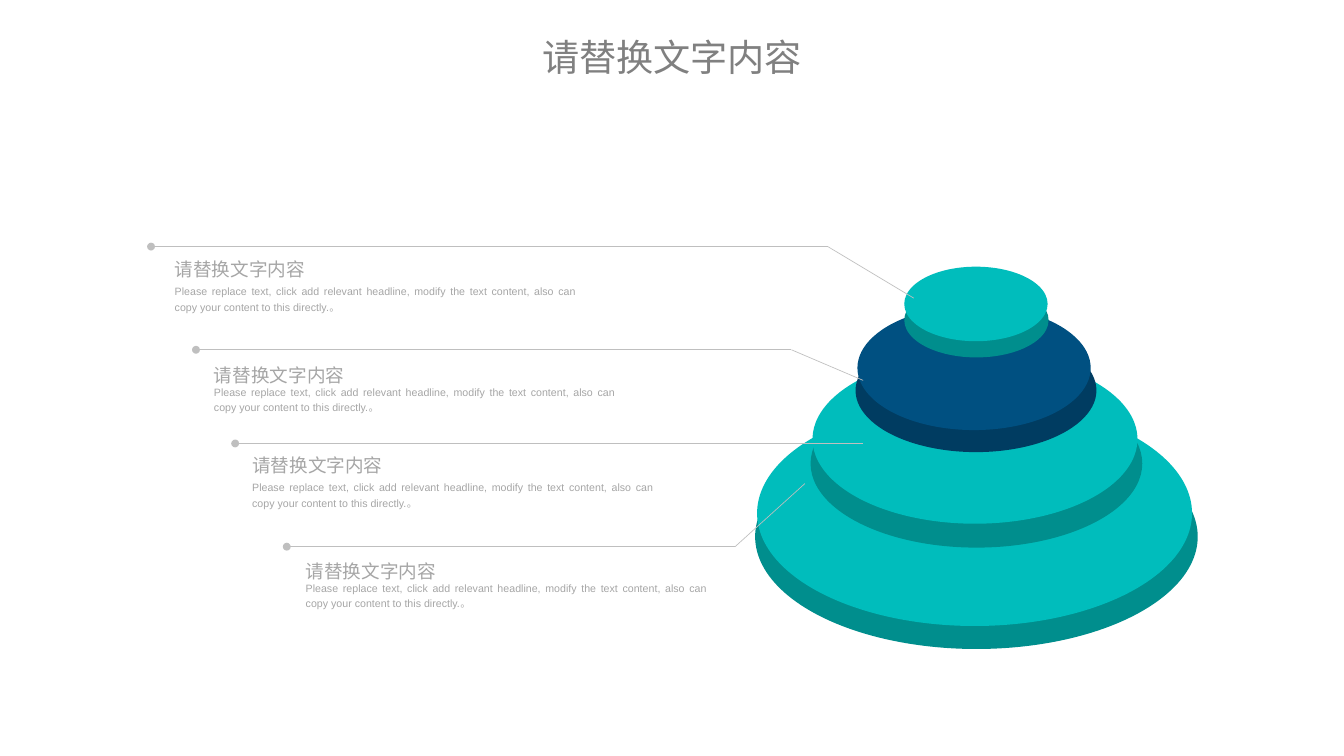
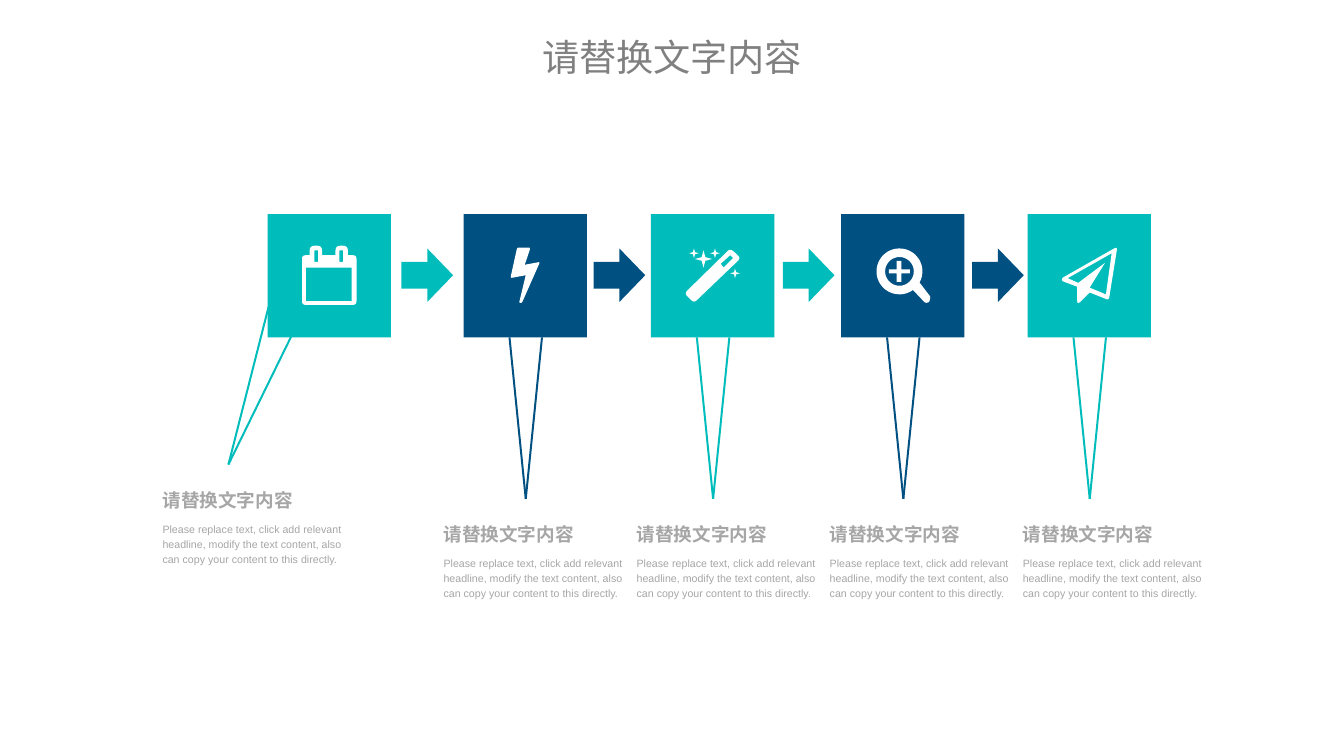
from math import cos, sin, radians

from lxml.etree import SubElement
from pptx import Presentation
from pptx.dml.color import RGBColor
from pptx.enum.shapes import MSO_CONNECTOR, MSO_SHAPE
from pptx.enum.text import MSO_ANCHOR, MSO_AUTO_SIZE, PP_ALIGN
from pptx.oxml.ns import qn
from pptx.util import Emu, Pt

# Scale: 100 px to the inch; outlines are traced in tenths of a px
PX = 9144
FINE = 10
WIDE, HIGH = 1406, 791

TEAL = RGBColor(0x00, 0xBD, 0xBC)
TEAL_DARK = RGBColor(0x00, 0x8E, 0x8D)
NAVY = RGBColor(0x00, 0x50, 0x81)
NAVY_DARK = RGBColor(0x00, 0x3C, 0x61)
WHITE = RGBColor(0xFF, 0xFF, 0xFF)
GREY = RGBColor(0x80, 0x80, 0x80)
PALE = RGBColor(0xA6, 0xA6, 0xA6)
RULE = RGBColor(0xBF, 0xBF, 0xBF)

# Shared wording
HEAD = "请替换文字内容"
BODY = ("Please replace text, click add relevant headline, modify the text "
        "content, also can copy your content to this directly.")

# Text styles: font, paragraph, frame, inset (side, top) and colour
BOX = {"word_wrap": True, "auto_size": MSO_AUTO_SIZE.SHAPE_TO_FIT_TEXT}
FIXED = {"word_wrap": True, "auto_size": MSO_AUTO_SIZE.NONE,
         "vertical_anchor": MSO_ANCHOR.MIDDLE}
LEFT = {"alignment": PP_ALIGN.LEFT, "line_spacing": 1.2}
TITLE = {"font": {"size": Pt(28)}, "para": {"alignment": PP_ALIGN.CENTER, "line_spacing": 1.3},
         "frame": BOX, "inset": (0, 0), "hue": GREY}
LABEL = {"font": {"size": Pt(14)}, "para": LEFT,
         "frame": BOX, "inset": (10, 5), "hue": PALE}
NOTE = {"font": {"size": Pt(8)}, "para": {"alignment": PP_ALIGN.JUSTIFY, "line_spacing": 1.2},
        "frame": BOX, "inset": (10, 5), "hue": PALE}
STEP = {"font": {"size": Pt(14), "bold": True}, "para": LEFT,
        "frame": FIXED, "inset": (0, 11), "hue": PALE}
HINT = {"font": {"size": Pt(8)}, "para": LEFT,
        "frame": BOX, "inset": (0, 0), "hue": PALE}

# Slide 1: discs from the base up, as side and face with their colours
DISCS = [
    ((790, 444, 463, 235), (792, 419, 455, 236), TEAL_DARK, TEAL),
    ((848, 397, 347, 176), (850, 371, 340, 177), TEAL_DARK, TEAL),
    ((895, 344, 252, 129), (897, 320, 244, 130), NAVY_DARK, NAVY),
    ((946, 296, 151, 78), (946, 279, 150, 78), TEAL_DARK, TEAL),
]
# Leaders run from disc to dot; then text left, label top, note top
NOTES = [
    ([(956, 312), (866, 258), (158, 258)], 173, 260, 291),
    ([(903, 398), (828, 366), (205, 366)], 214, 371, 396),
    ([(903, 464), (246, 464)], 254, 465, 496),
    ([(842, 506), (769, 572), (300, 572)], 310, 576, 601),
]

# Slide 2: tiles and arrows
TILE, TOP = 129, 224
FOOT = TOP + TILE
ARROWS = [420, 621, 819, 1017]


# Outlines, in px from a tile's corner
def block(left, top, right, low):
    return [(left, top), (right, top), (right, low), (left, low)]


def arc(x, y, size, start=0, end=360):
    turns = range(start, end, 5)
    return [(x + size * cos(radians(a)), y + size * sin(radians(a))) for a in turns]


def star(x, y, size):
    spots = []
    for i in range(8):
        reach = size * (0.3 if i % 2 else 1)
        spots += [(x + reach * cos(radians(45 * i)), y + reach * sin(radians(45 * i)))]
    return spots


# A third value on a point is the size of its rounded corner
DATE = [
    [(36, 95, 4), (36, 43, 4), (44, 43), (44, 33, 6), (57, 33, 6), (57, 43),
     (71, 43), (71, 33, 6), (84, 33, 6), (84, 43), (93, 43, 4), (93, 95, 4)],
    block(40, 56, 88, 91), block(49, 38, 53, 50), block(75, 38, 79, 50),
]
BOLT = [[(56, 35, 2), (70, 35, 2), (64, 53), (80, 50, 2),
         (61, 93, 2), (58, 93, 2), (65, 64), (49, 67, 2)]]
WAND = [
    [(35, 83, 4), (45, 93, 4), (94, 46, 4), (83, 36, 4)],
    [(86, 46), (83, 43), (73, 52), (76, 56)],
    star(45, 41, 5), star(55, 47, 9), star(67, 41, 5), star(88, 62, 5),
]
LENS = [
    arc(61, 60, 24, 54, 394) + [(93, 86), (93, 89), (92, 92), (89, 93), (87, 92)],
    arc(61, 60, 15),
    [(58, 49), (63, 49), (63, 58), (72, 58), (72, 62), (63, 62),
     (63, 71), (58, 71), (58, 62), (50, 62), (50, 58), (58, 58)],
]
PLANE = [
    [(94, 34, 4), (85, 90, 3), (65, 82), (54, 93, 2), (52, 93, 2),
     (52, 76), (36, 70, 2), (36, 67, 2)],
    [(88, 41), (42, 67), (53, 72), (81, 51), (65, 77), (82, 84)],
]


def fan(left):
    mid = left + 65
    return (mid, 522), [(mid - 17, FOOT), (mid + 17, FOOT)]


# Tile left, colour, icon, pointer (tip, feet), text left, text top
STEPS = [
    (280, TEAL, DATE, ((239, 486), [(281, 321), (314, 333)]), 170, 502),
    (485, NAVY, BOLT, fan(485), 464, 538),
    (681, TEAL, WAND, fan(681), 666, 538),
    (880, NAVY, LENS, fan(880), 868, 538),
    (1075, TEAL, PLANE, fan(1075), 1070, 538),
]


# Drawing helpers
def emu(*sizes):
    return [Emu(round(size * PX)) for size in sizes]


def apply(target, values):
    for key, value in values.items():
        setattr(target, key, value)


def paint(shape, hue):
    shape.shadow.inherit = False
    shape.fill.solid()
    shape.fill.fore_color.rgb = hue
    shape.line.fill.background()


def put(slide, kind, box, hue):
    paint(slide.shapes.add_shape(kind, *emu(*box)), hue)


def write(slide, words, box, style):
    frame = slide.shapes.add_textbox(*emu(*box)).text_frame
    side, top = emu(*style["inset"])
    apply(frame, style["frame"])
    apply(frame, {"margin_left": side, "margin_right": side,
                  "margin_top": top, "margin_bottom": top})
    para = frame.paragraphs[0]
    apply(para, style["para"])
    run = para.add_run()
    run.text = words
    apply(run.font, {"name": "Arial", **style["font"]})
    run.font.color.rgb = style["hue"]


def link(slide, start, end, hue, width, dot=False):
    line = slide.shapes.add_connector(MSO_CONNECTOR.STRAIGHT, *emu(*start, *end))
    line.line.color.rgb = hue
    line.line.width = Pt(width)
    if dot:
        SubElement(line.line._get_or_add_ln(), qn("a:tailEnd"), type="oval")
    SubElement(line._element.spPr, qn("a:effectLst"))


def smooth(points):
    """Replace each rounded corner by a short curve."""
    curve = []
    for i, (x, y, *size) in enumerate(points):
        if not size:
            curve.append((x, y))
            continue
        ends = []
        for near in (points[i - 1], points[(i + 1) % len(points)]):
            dx, dy = near[0] - x, near[1] - y
            span = (dx * dx + dy * dy) ** 0.5
            part = min(size[0] / span, 0.5)
            ends.append((x + dx * part, y + dy * part))
        (ax, ay), (bx, by) = ends
        for t in (0, 0.25, 0.5, 0.75, 1):
            u, v, w = (1 - t) ** 2, 2 * t * (1 - t), t * t
            curve.append((u * ax + v * x + w * bx, u * ay + v * y + w * by))
    return curve


def draw(slide, icon, left, top):
    pen = None
    for part in icon:
        first, *rest = [((left + x) * FINE, (top + y) * FINE) for x, y in smooth(part)]
        if pen is None:
            pen = slide.shapes.build_freeform(*first, scale=PX / FINE)
        else:
            pen.move_to(*first)
        pen.add_line_segments(rest, close=True)
    paint(pen.convert_to_shape(), WHITE)


def start(deck):
    slide = deck.slides.add_slide(deck.slide_layouts[6])
    write(slide, HEAD, (547, 22, 312, 55), TITLE)
    return slide


# Slides
def stack(deck):
    slide = start(deck)
    for side, face, dark, light in DISCS:
        put(slide, MSO_SHAPE.OVAL, side, dark)
        put(slide, MSO_SHAPE.OVAL, face, light)
    for route, left, head, note in NOTES:
        for a, b in zip(route, route[1:]):
            link(slide, a, b, RULE, 0.5, dot=b == route[-1])
        write(slide, BODY + "。", (left, note, 440, 42), NOTE)
        write(slide, HEAD, (left, head, 173, 36), LABEL)


def flow(deck):
    slide = start(deck)
    for left, hue, icon, (tip, feet), text, top in STEPS:
        for foot in feet:
            link(slide, tip, foot, hue, 1.5)
        put(slide, MSO_SHAPE.RECTANGLE, (left, TOP, TILE, TILE), hue)
        draw(slide, icon, left, TOP)
        write(slide, HEAD, (text, top, 146, 37), STEP)
        write(slide, BODY, (text, top + 42, 192, 47), HINT)
    for left, step in zip(ARROWS, STEPS):
        put(slide, MSO_SHAPE.RIGHT_ARROW, (left, 260, 54, 56), step[1])


def main():
    deck = Presentation()
    deck.slide_width, deck.slide_height = emu(WIDE, HIGH)
    stack(deck)
    flow(deck)
    deck.save("out.pptx")


if __name__ == "__main__":
    main()
